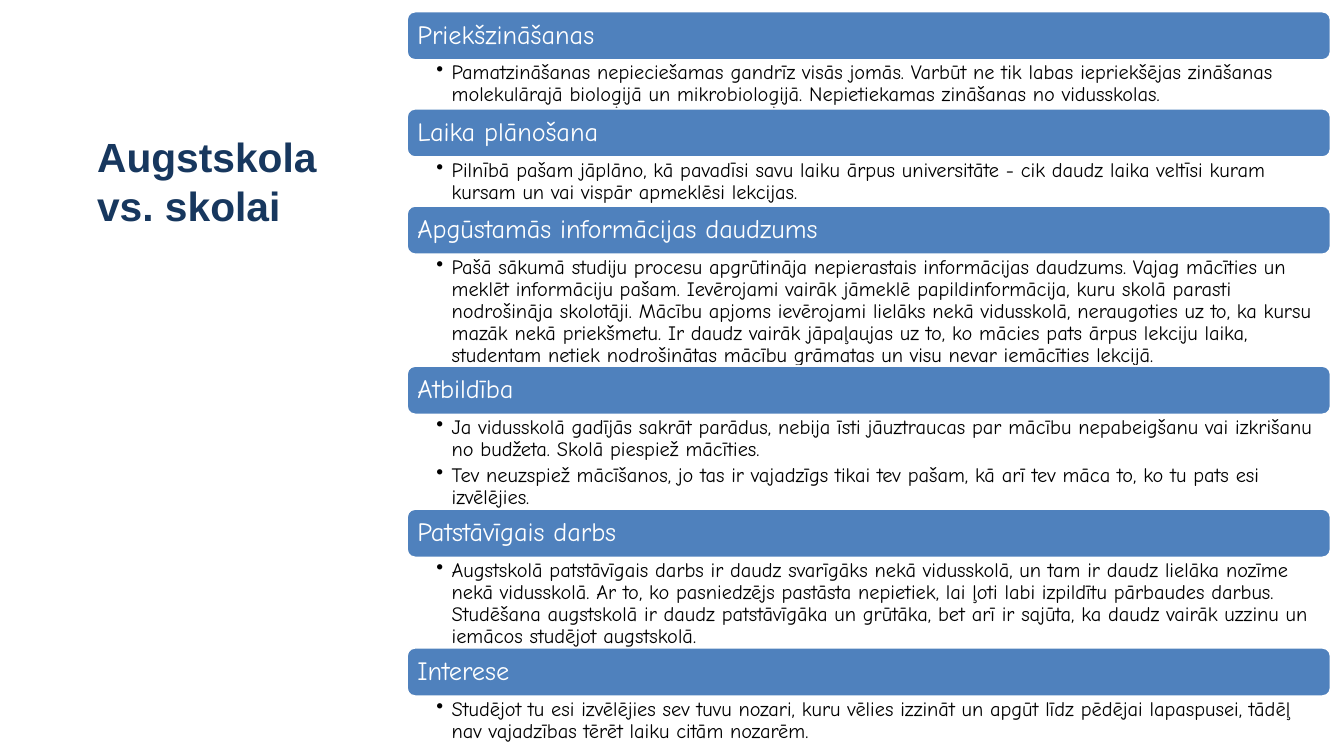
from lxml import etree
from pptx import Presentation
from pptx.dml.color import RGBColor
from pptx.enum.shapes import MSO_SHAPE
from pptx.enum.text import MSO_ANCHOR, PP_ALIGN
from pptx.oxml.ns import qn
from pptx.util import Inches, Pt

ROUNDED = MSO_SHAPE.ROUNDED_RECTANGLE
TOP, MIDDLE = MSO_ANCHOR.TOP, MSO_ANCHOR.MIDDLE
LEFT = PP_ALIGN.LEFT

NAVY = RGBColor(0x17, 0x37, 0x5E)
BLUE = RGBColor(0x4F, 0x81, 0xBD)
WHITE = RGBColor(0xFF, 0xFF, 0xFF)
BLACK = RGBColor(0x00, 0x00, 0x00)

TITLE_FONT = {"name": "Arial", "size": Pt(48), "bold": True}
HEADING_FONT = {"name": "Comic Neue", "size": Pt(31)}
BULLET_FONT = {"name": "Comic Neue", "size": Pt(24)}

TITLE_FRAME = {"vertical_anchor": TOP}
HEADING_FRAME = {"vertical_anchor": MIDDLE, "margin_left": Inches(0.13), "margin_right": Inches(0.13),
                 "margin_top": Inches(0.13), "margin_bottom": Inches(0.13)}
BULLET_FRAME = {"vertical_anchor": TOP, "margin_left": Inches(0.48), "margin_right": Inches(0.24),
                "margin_top": Inches(0.04), "margin_bottom": Inches(0.04)}

TITLE_PARAGRAPH = {"alignment": LEFT, "line_spacing": 1.01}
HEADING_PARAGRAPH = {"alignment": LEFT, "line_spacing": 0.9}
BULLET_PARAGRAPH = {"alignment": LEFT, "line_spacing": 0.9, "space_after": Pt(4.8)}

LIST_LEFT, LIST_TOP, LIST_WIDTH = Inches(6.66), Inches(0.19), Inches(15.11)
BAR_HEIGHT = Inches(0.79)
BULLET_INDENT = Inches(0.25)

# Heading, height of the bullet area, bullets
TOPICS = [
    ("Priekšzināšanas", Inches(0.8), [
        "Pamatzināšanas nepieciešamas gandrīz visās jomās. Varbūt ne tik labas iepriekšējas zināšanas "
        "molekulārajā bioloģijā un mikrobioloģijā. Nepietiekamas zināšanas no vidusskolas."]),
    ("Laika plānošana", Inches(0.8), [
        "Pilnībā pašam jāplāno, kā pavadīsi savu laiku ārpus universitāte - cik daudz laika veltīsi kuram "
        "kursam un vai vispār apmeklēsi lekcijas."]),
    ("Apgūstamās informācijas daudzums", Inches(1.83), [
        "Pašā sākumā studiju procesu apgrūtināja nepierastais informācijas daudzums. Vajag mācīties un "
        "meklēt informāciju pašam. Ievērojami vairāk jāmeklē papildinformācija, kuru skolā parasti "
        "nodrošināja skolotāji. Mācību apjoms ievērojami lielāks nekā vidusskolā, neraugoties uz to, ka kursu "
        "mazāk nekā priekšmetu. Ir daudz vairāk jāpaļaujas uz to, ko mācies pats ārpus lekciju laika, "
        "studentam netiek nodrošinātas mācību grāmatas un visu nevar iemācīties lekcijā."]),
    ("Atbildība", Inches(1.55), [
        "Ja vidusskolā gadījās sakrāt parādus, nebija īsti jāuztraucas par mācību nepabeigšanu vai izkrišanu "
        "no budžeta. Skolā piespiež mācīties.",
        "Tev neuzspiež mācīšanos, jo tas ir vajadzīgs tikai tev pašam, kā arī tev māca to, ko tu pats esi "
        "izvēlējies."]),
    ("Patstāvīgais darbs", Inches(1.48), [
        "Augstskolā patstāvīgais darbs ir daudz svarīgāks nekā vidusskolā, un tam ir daudz lielāka nozīme "
        "nekā vidusskolā. Ar to, ko pasniedzējs pastāsta nepietiek, lai ļoti labi izpildītu pārbaudes darbus. "
        "Studēšana augstskolā ir daudz patstāvīgāka un grūtāka, bet arī ir sajūta, ka daudz vairāk uzzinu un "
        "iemācos studējot augstskolā."]),
    ("Interese", Inches(0.8), [
        "Studējot tu esi izvēlējies sev tuvu nozari, kuru vēlies izzināt un apgūt līdz pēdējai lapaspusei, tādēļ "
        "nav vajadzības tērēt laiku citām nozarēm."]),
]


def set_attributes(target, values):
    for name, value in values.items():
        setattr(target, name, value)


def add_bullet_mark(paragraph):
    properties = paragraph._p.get_or_add_pPr()
    properties.set("lvl", "1")
    properties.set("marL", str(BULLET_INDENT))
    properties.set("indent", str(-BULLET_INDENT))
    etree.SubElement(properties, qn("a:buChar")).set("char", "•")


def write_text(frame, texts, frame_format, paragraph_format, font_format, color, bulleted=False):
    """Fill a text frame with one formatted paragraph for each text."""
    frame.word_wrap = True
    set_attributes(frame, frame_format)
    for index, text in enumerate(texts):
        paragraph = frame.add_paragraph() if index else frame.paragraphs[0]
        if bulleted:
            add_bullet_mark(paragraph)
        set_attributes(paragraph, paragraph_format)
        run = paragraph.add_run()
        run.text = text
        set_attributes(run.font, font_format)
        run.font.color.rgb = color


def add_title(slide, title):
    title_box = slide.shapes.add_textbox(Inches(1.49), Inches(2.1), Inches(4.25), Inches(5.29))
    write_text(title_box.text_frame, [title], TITLE_FRAME, TITLE_PARAGRAPH, TITLE_FONT, NAVY)


def add_heading_bar(slide, top, heading):
    bar = slide.shapes.add_shape(ROUNDED, LIST_LEFT, top, LIST_WIDTH, BAR_HEIGHT)
    bar.shadow.inherit = False
    bar.fill.solid()
    bar.fill.fore_color.rgb = BLUE
    bar.line.color.rgb = WHITE
    bar.line.width = Pt(2)
    write_text(bar.text_frame, [heading], HEADING_FRAME, HEADING_PARAGRAPH, HEADING_FONT, WHITE)


def add_bullets(slide, top, height, bullets):
    bullet_box = slide.shapes.add_textbox(LIST_LEFT, top, LIST_WIDTH, height)
    write_text(bullet_box.text_frame, bullets, BULLET_FRAME, BULLET_PARAGRAPH, BULLET_FONT, BLACK,
               bulleted=True)


def main():
    presentation = Presentation()
    presentation.slide_width = Inches(21.99)
    presentation.slide_height = Inches(12.37)
    slide = presentation.slides.add_slide(presentation.slide_layouts[6])

    add_title(slide, "Augstskola vs. skolai")
    top = LIST_TOP
    for heading, bullets_height, bullets in TOPICS:
        add_heading_bar(slide, top, heading)
        top += BAR_HEIGHT
        add_bullets(slide, top, bullets_height, bullets)
        top += bullets_height

    presentation.save("out.pptx")


if __name__ == "__main__":
    main()
